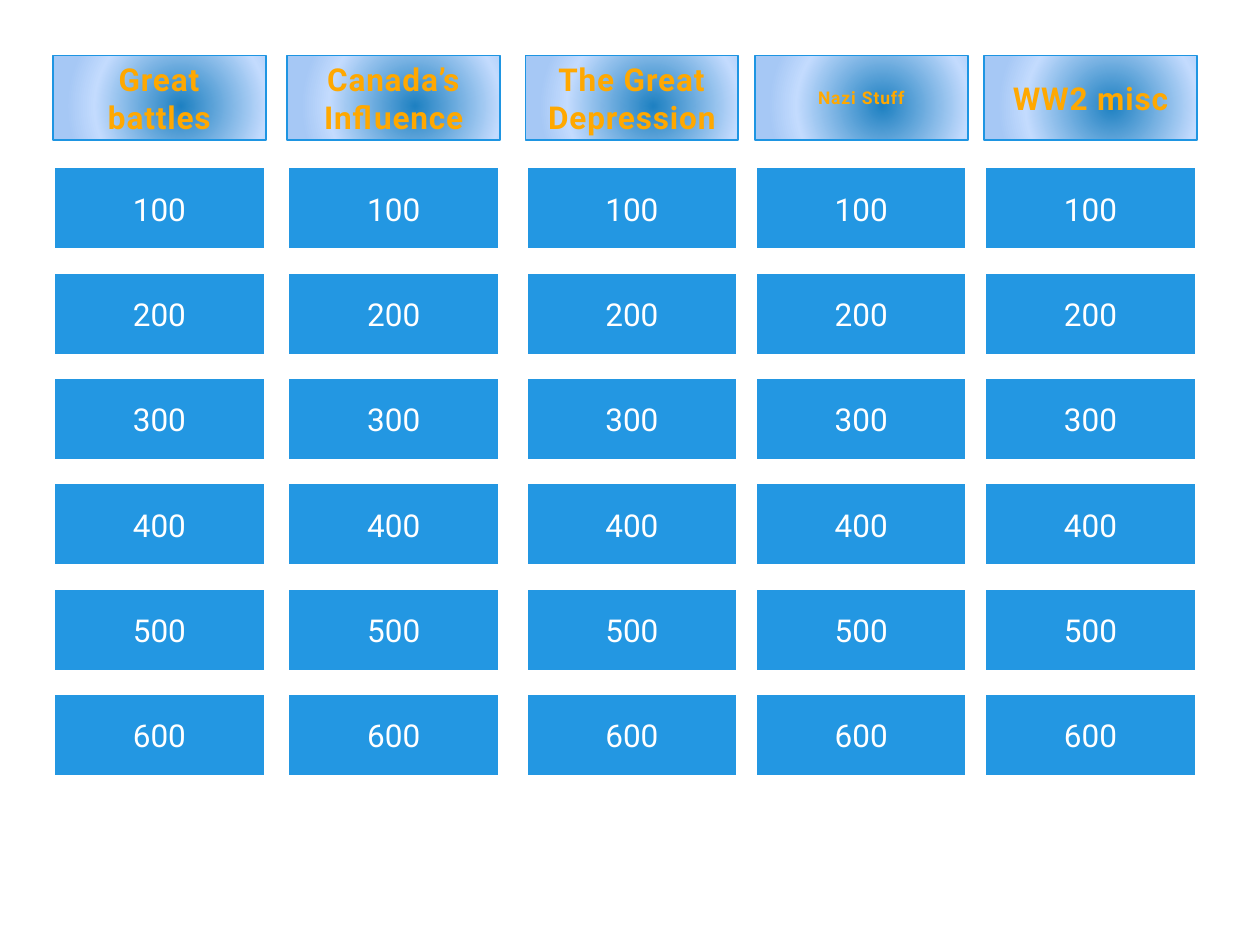
from pptx import Presentation
from pptx.dml.color import RGBColor as RGB
from pptx.enum.shapes import MSO_SHAPE as SHAPE
from pptx.enum.text import MSO_ANCHOR as ANCHOR, PP_ALIGN as ALIGN
from pptx.oxml import parse_xml
from pptx.oxml.ns import nsdecls, qn
from pptx.util import Inches, Pt

WHITE = RGB(0xFF, 0xFF, 0xFF)
BLUE = RGB(0x23, 0x97, 0xE2)
EDGE = RGB(0x1E, 0x95, 0xE2)
GOLD = RGB(0xFF, 0xA8, 0x00)
BROWN = RGB(0xB4, 0x77, 0x00)
GLOW = (
    (0, RGB(0x1E, 0x81, 0xC2)),
    (75, RGB(0xC3, 0xDB, 0xFE)),
    (100, RGB(0xA6, 0xC8, 0xF5)),
)
FONT = "Roboto"

LEFTS = [Inches(x) for x in (0.42, 2.28, 4.17, 5.99, 7.81)]
WIDTH, HEIGHT = Inches(1.69), Inches(0.67)
HEAD_TOP = Inches(0.44)
FIRST, LAST = Inches(1.32), Inches(5.5)
TOPICS = (
    ("Great battles", 18),
    ("Canada’s Influence", 18),
    ("The Great Depression", 18),
    ("Nazi Stuff", 10),
    ("WW2 misc", 18),
)
POINTS = range(100, 700, 100)


def put_text(shape, text, size=18, color=WHITE, bold=False, fade=None, space=0):
    """Write centred text, with an optional fade to a second colour."""
    frame = shape.text_frame
    frame.word_wrap = True
    frame.vertical_anchor = ANCHOR.MIDDLE
    para = frame.paragraphs[0]
    para.alignment = ALIGN.CENTER
    run = para.add_run()
    run.text = text
    font = run.font
    font.name, font.size, font.bold = FONT, Pt(size), bold
    if space:
        run._r.get_or_add_rPr().set("spc", str(round(space * 100)))
    if fade is None:
        font.fill.solid()
        font.fill.fore_color.rgb = color
    else:
        font.fill.gradient()
        font.fill.gradient_angle = 270
        stops = zip(font.fill.gradient_stops, (color, fade), (0.25, 1))
        for stop, tone, place in stops:
            stop.color.rgb, stop.position = tone, place


def add_box(slide, box, line, weight):
    """Add a plain outlined rectangle."""
    shape = slide.shapes.add_shape(SHAPE.RECTANGLE, *box)
    shape.shadow.inherit = False
    shape.line.color.rgb = line
    shape.line.width = Pt(weight)
    return shape


def set_glow(shape):
    """Fill a shape with the round gradient."""
    shape.fill.gradient()
    props = shape._element.spPr
    stops = "".join(
        f'<a:gs pos="{place * 1000}"><a:srgbClr val="{tone}"/></a:gs>'
        for place, tone in GLOW
    )
    glow = parse_xml(
        f'<a:gradFill {nsdecls("a")}><a:gsLst>{stops}</a:gsLst>'
        '<a:path path="circle">'
        '<a:fillToRect l="25000" t="25000" r="5000" b="5000"/>'
        "</a:path></a:gradFill>"
    )
    props.replace(props.find(qn("a:gradFill")), glow)


def add_topic(slide, box, text, size):
    """Add the heading of one column."""
    shape = add_box(slide, box, EDGE, 1)
    set_glow(shape)
    put_text(shape, text, size=size, color=GOLD, bold=True, fade=BROWN, space=0.5)


def add_tile(slide, box, points):
    """Add one tile with its points."""
    shape = add_box(slide, box, WHITE, 2.5)
    shape.fill.solid()
    shape.fill.fore_color.rgb = BLUE
    put_text(shape, str(points))


def add_column(slide, left, topic):
    """Add a heading and the evenly spaced tiles below it."""
    add_topic(slide, (left, HEAD_TOP, WIDTH, HEIGHT), *topic)
    step = (LAST - FIRST) // (len(POINTS) - 1)
    for row, points in enumerate(POINTS):
        add_tile(slide, (left, FIRST + row * step, WIDTH, HEIGHT), points)


def main():
    """Build the game board and save it."""
    deck = Presentation()
    deck.slide_width, deck.slide_height = Inches(10), Inches(7.5)
    slide = deck.slides.add_slide(deck.slide_layouts[6])
    for left, topic in zip(LEFTS, TOPICS):
        add_column(slide, left, topic)
    deck.save("out.pptx")


if __name__ == "__main__":
    main()
